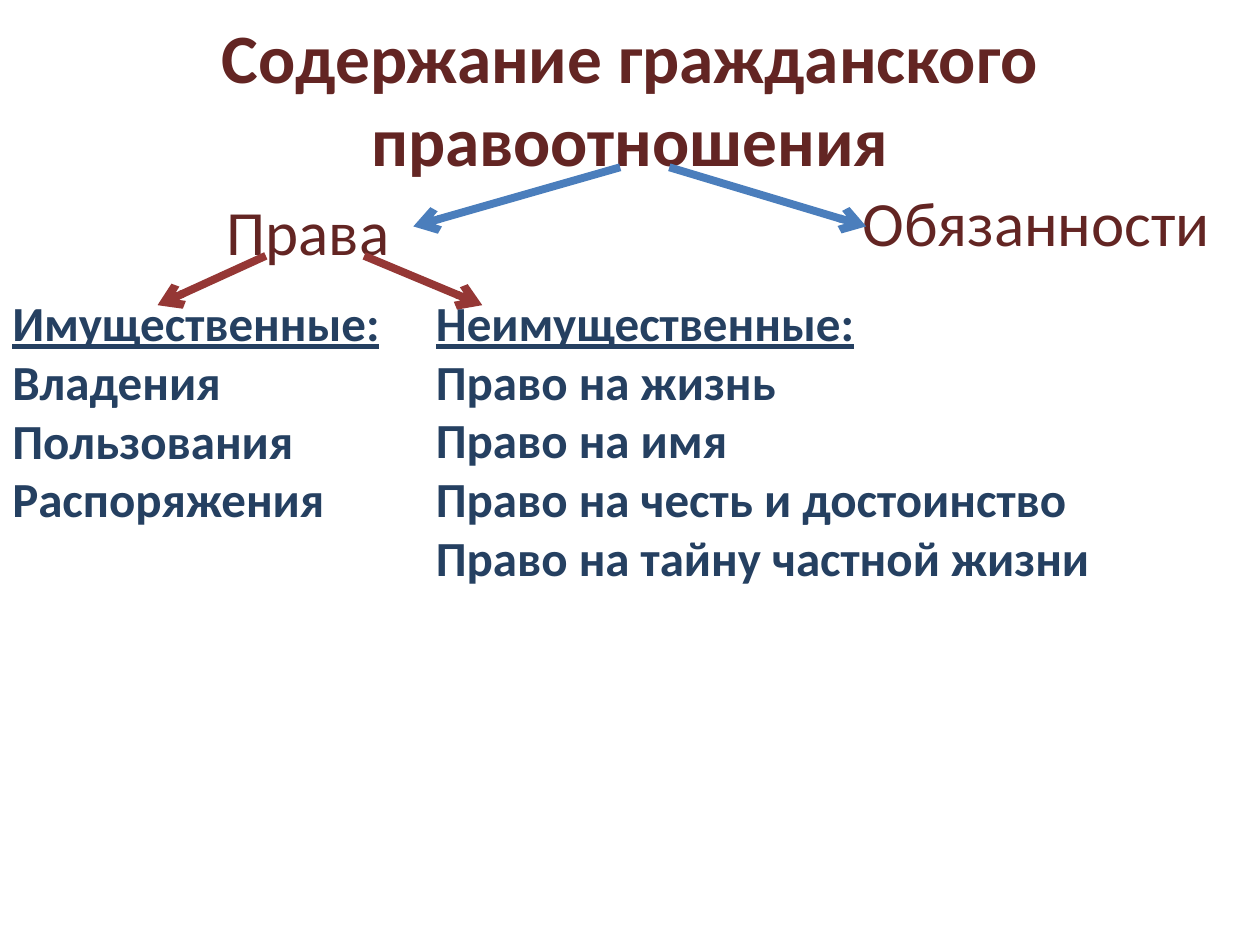
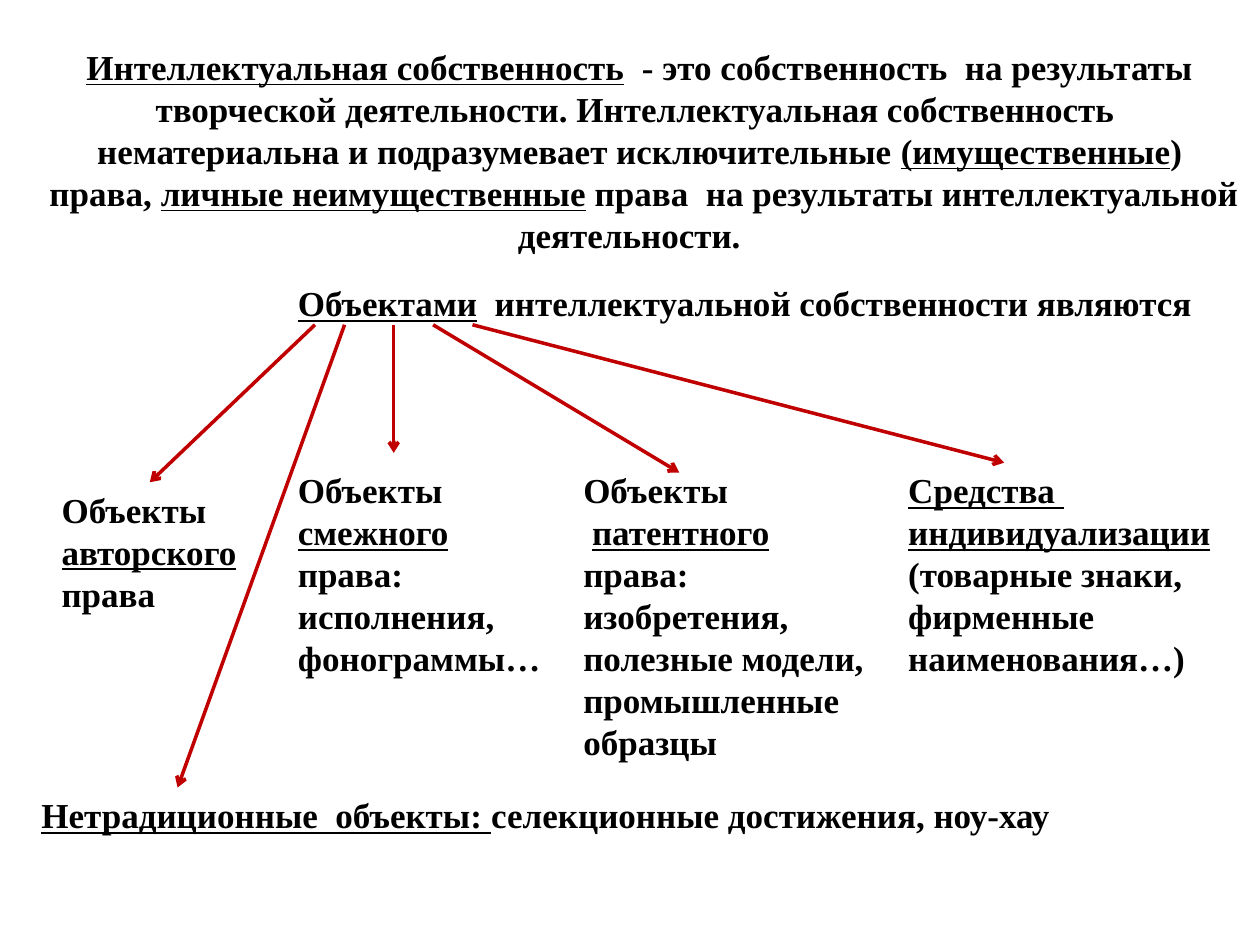
from lxml import etree
from pptx import Presentation, util as u
from pptx.dml.color import RGBColor
from pptx.enum import shapes, text
from pptx.oxml.ns import qn

MAROON, NAVY, BLUE, BRICK, RED, BLACK = (
    "632523", "254061", "4B7EBC", "953735", "C00000", "000000")


def rgb(value):
    """Turn a hex string into a colour."""
    return RGBColor.from_string(value)


class Deck:
    """Hold the text style and the current slide."""

    def __init__(self):
        """Open an empty 10 by 7.5 inch presentation."""
        self.prs = Presentation()
        self.prs.slide_width, self.prs.slide_height = u.Pt(720), u.Pt(540)

    def new_slide(self, font, size, color, bold=True):
        """Start a blank slide and set its usual text style."""
        self.slide = self.prs.slides.add_slide(self.prs.slide_layouts[6])
        self.font, self.size, self.color, self.bold = font, size, color, bold

    def label(self, box, lines, size=None, color=None, bold=None,
              centred=False, middle=False, wrap=True):
        """Add a text box; underscores enclose underlined words."""
        area = self.slide.shapes.add_textbox(*map(u.Pt, box))
        frame = area.text_frame
        frame.word_wrap = wrap
        if not wrap:
            frame.auto_size = text.MSO_AUTO_SIZE.SHAPE_TO_FIT_TEXT
        if middle:
            frame.vertical_anchor = text.MSO_ANCHOR.MIDDLE
        frame.text = "\n".join(lines)
        for paragraph, line in zip(frame.paragraphs, lines):
            paragraph.alignment = text.PP_ALIGN.CENTER if centred else text.PP_ALIGN.LEFT
            paragraph.text = ""
            for index, part in enumerate(line.split("_")):
                if part:
                    run = paragraph.add_run()
                    run.text = part
                    run.font.name = self.font
                    run.font.size = u.Pt(size or self.size)
                    run.font.bold = self.bold if bold is None else bold
                    run.font.underline = index % 2 == 1
                    run.font.color.rgb = rgb(color or self.color)
        return area

    def arrow(self, start, end, color, width, target=None):
        """Draw an arrow, joined to the top of target if one is given."""
        line = self.slide.shapes.add_connector(
            shapes.MSO_CONNECTOR.STRAIGHT, *map(u.Pt, (*start, *end)))
        if target is not None:
            line.end_connect(target, 0)
        line.line.color.rgb = rgb(color)
        line.line.width = u.Pt(width)
        properties = line._element.spPr
        etree.SubElement(properties.get_or_add_ln(), qn("a:tailEnd"), type="arrow")
        etree.SubElement(properties, qn("a:effectLst"))


def legal_relation(deck):
    """Build the slide on rights and duties."""
    deck.new_slide("Calibri", 28, NAVY)
    deck.label((0, 0, 720, 111.6), ["Содержание гражданского правоотношения"],
               size=39.6, color=MAROON, centred=True, middle=True)
    for branch, box in (("Права ", (0, 106.5, 360, 56)),
                        ("Обязанности ", (472.5, 101.25, 247.5, 62))):
        deck.label(box, [branch], size=36, color=MAROON, bold=False, centred=True)

    deck.label((0, 163.5, 236, 143),
               ["_Имущественные:_", "Владения", "Пользования", "Распоряжения"])
    deck.label((242, 163.5, 394, 177),
               ["_Неимущественные:_", "Право на жизнь", "Право на имя",
                "Право на честь и достоинство", "Право на тайну частной жизни"])

    for color, top, bottom, spans in (
            (BLUE, 95.6, 129.4, ((354.4, 236.2), (382.5, 495))),
            (BRICK, 146.2, 174.4, ((151.9, 90), (208.1, 275.6)))):
        for start, end in spans:
            deck.arrow((start, top), (end, bottom), color, 4.5)


def intellectual_property(deck):
    """Build the slide on intellectual property and its objects."""
    deck.new_slide("Times New Roman", 20, BLACK)
    deck.label((16, 22.5, 704, 152.6), [
        "_Интеллектуальная собственность_  - это собственность  на результаты ",
        "творческой деятельности. Интеллектуальная собственность  ",
        "нематериальна и подразумевает исключительные _(имущественные_) ",
        " права, _личные неимущественные_ права  на результаты интеллектуальной ",
        "деятельности. \t"], centred=True, wrap=False)
    deck.label((163.1, 157.5, 530, 31.5),
               ["_Объектами_  интеллектуальной собственности являются"], wrap=False)

    copyright_objects = deck.label(
        (28.1, 275.6, 115, 80), ["Объекты", "_авторского_", "права"], wrap=False)
    for left, width, height, lines in (
            (163.1, 154, 150.5, ["Объекты", "_смежного_ ", "права:",
                                 "исполнения,", "фонограммы…"]),
            (326.2, 181, 177, ["Объекты", " _патентного_ ", "права:", "изобретения,",
                               "полезные модели,", "промышленные", "образцы"]),
            (511.9, 188.6, 128, ["_Средства _", "_индивидуализации_", "(товарные знаки,",
                                 "фирменные", "наименования…)"])):
        deck.label((left, 264.4, width, height), lines, wrap=False)
    deck.label((16.6, 450, 600.5, 31.5),
               ["_Нетрадиционные  объекты: _селекционные достижения, ноу-хау"],
               wrap=False)

    for start, end, target in ((180, (85.6, 275.6), copyright_objects),
                               (196.9, (101.5, 450), None),
                               (225, (225, 258.8), None),
                               (247.5, (388.1, 270), None),
                               (270, (573.8, 264.4), None)):
        deck.arrow((start, 185.6), end, RED, 2, target)


def main():
    """Build both slides and save them."""
    deck = Deck()
    legal_relation(deck)
    intellectual_property(deck)
    deck.prs.save("out.pptx")


if __name__ == "__main__":
    main()
